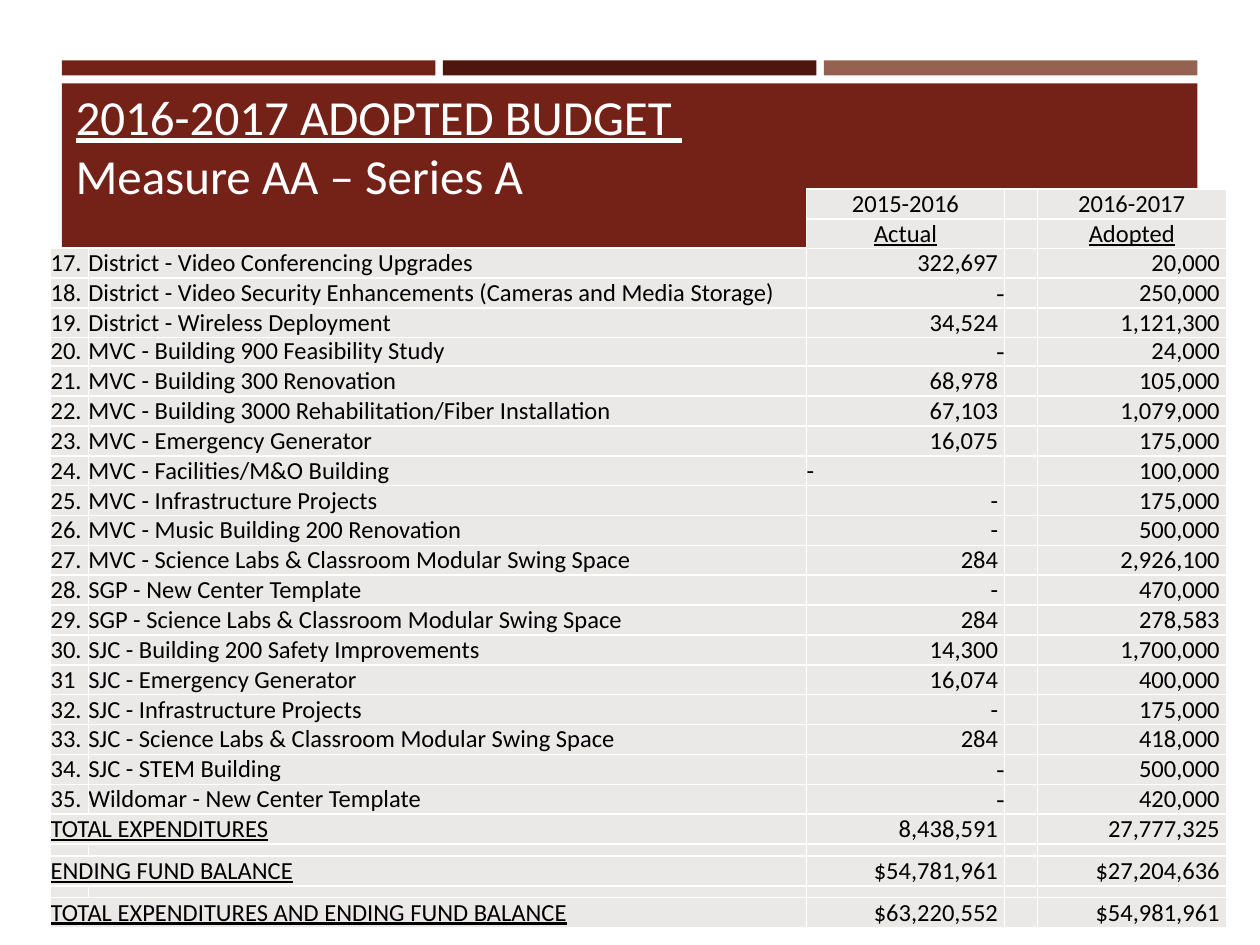
from lxml.etree import SubElement
from pptx import Presentation
from pptx.dml.color import RGBColor
from pptx.enum.shapes import MSO_SHAPE
from pptx.enum.text import MSO_ANCHOR, MSO_AUTO_SIZE, PP_ALIGN
from pptx.oxml.ns import qn
from pptx.util import Cm, Pt

COLORS = {
    "red": "742117",
    "dark": "4D160F",
    "tan": "956251",
    "cell": "EBE8E8",
    "white": "FFFFFF",
    "black": "000000",
}
NUMBER_WIDTH, NAME_WIDTH = 0.76, 14.48
AMOUNT_WIDTHS = [3.99, 0.66, 3.81]
TABLE_LEFT = 1.02
ROW_HEIGHT, SPACER_HEIGHT = 0.6, 0.24
AMOUNT_INSET = 0.13
FIRST_NUMBER = 17
UPPER_COUNT = 3
FLUSH_DASHES = {18, 20, 34, 35}
LEFT_DASHES = {24}

PROJECTS = [
    ("District - Video Conferencing Upgrades", "322,697", "20,000"),
    ("District - Video Security Enhancements (Cameras and Media Storage)", "-", "250,000"),
    ("District - Wireless Deployment", "34,524", "1,121,300"),
    ("MVC - Building 900 Feasibility Study", "-", "24,000"),
    ("MVC - Building 300 Renovation", "68,978", "105,000"),
    ("MVC - Building 3000 Rehabilitation/Fiber Installation", "67,103", "1,079,000"),
    ("MVC - Emergency Generator", "16,075", "175,000"),
    ("MVC - Facilities/M&O Building", "-", "100,000"),
    ("MVC - Infrastructure Projects", "-", "175,000"),
    ("MVC - Music Building 200 Renovation", "-", "500,000"),
    ("MVC - Science Labs & Classroom Modular Swing Space", "284", "2,926,100"),
    ("SGP - New Center Template", "-", "470,000"),
    ("SGP - Science Labs & Classroom Modular Swing Space", "284", "278,583"),
    ("SJC - Building 200 Safety Improvements", "14,300", "1,700,000"),
    ("SJC - Emergency Generator", "16,074", "400,000"),
    ("SJC - Infrastructure Projects", "-", "175,000"),
    ("SJC - Science Labs & Classroom Modular Swing Space", "284", "418,000"),
    ("SJC - STEM Building", "-", "500,000"),
    ("Wildomar - New Center Template", "-", "420,000"),
]
TOTALS = [
    ("TOTAL EXPENDITURES", "8,438,591", "27,777,325"),
    ("ENDING FUND BALANCE", "$54,781,961", "$27,204,636"),
    ("TOTAL EXPENDITURES AND ENDING FUND BALANCE", "$63,220,552", "$54,981,961"),
]


def color(name):
    return RGBColor.from_string(COLORS[name])


def add_text(para, text, size=14, font="Calibri", ink="black", underline=False, align=PP_ALIGN.LEFT):
    para.alignment = align
    span = para.add_run()
    span.text = text
    span.font.size = Pt(size)
    span.font.name = font
    span.font.color.rgb = color(ink)
    span.font.underline = underline


def add_bar(page, left, top, width, height, fill):
    bar = page.shapes.add_shape(MSO_SHAPE.RECTANGLE, Cm(left), Cm(top), Cm(width), Cm(height))
    bar.shadow.inherit = False
    bar.fill.solid()
    bar.fill.fore_color.rgb = color(fill)
    bar.line.fill.background()


def format_title(page):
    title = page.shapes.title
    title.left, title.top, title.width, title.height = Cm(1.27), Cm(1.24), Cm(22.2), Cm(3)
    frame = title.text_frame
    frame.auto_size = MSO_AUTO_SIZE.NONE
    frame.vertical_anchor = MSO_ANCHOR.BOTTOM
    para = frame.paragraphs[0]
    add_text(para, "2016-2017 ADOPTED BUDGET ", size=28, ink="white", underline=True)
    para.add_line_break()
    add_text(para, "Measure AA – Series A", size=28, ink="white")
    page.shapes._spTree.append(title._element)


def format_cell(cell, empty_size, anchor):
    cell.margin_left = cell.margin_right = cell.margin_top = cell.margin_bottom = 0
    cell.vertical_anchor = anchor
    properties = cell._tc.get_or_add_tcPr()
    for side in ("a:lnL", "a:lnR", "a:lnT", "a:lnB"):
        line = SubElement(properties, qn(side), w=str(Pt(1)))
        fill = SubElement(line, qn("a:solidFill"))
        SubElement(fill, qn("a:srgbClr"), val=COLORS["white"])
    cell.fill.solid()
    cell.fill.fore_color.rgb = color("cell")
    para = cell.text_frame.paragraphs[0]
    SubElement(para._p, qn("a:endParaRPr"), sz=str(empty_size * 100))


def add_grid(page, left, top, widths, heights, anchor=MSO_ANCHOR.MIDDLE):
    frame = page.shapes.add_table(
        len(heights), len(widths), Cm(left), Cm(top), Cm(sum(widths)), Cm(sum(heights))
    )
    table = frame.table
    table.first_row = table.horz_banding = False
    for column, width in zip(table.columns, widths):
        column.width = Cm(width)
    for row, height in zip(table.rows, heights):
        row.height = Cm(height)
        for cell in row.cells:
            format_cell(cell, 5 if height == SPACER_HEIGHT else 14, anchor)
    return table


def write_cell(cell, text, **text_format):
    add_text(cell.text_frame.paragraphs[0], text, **text_format)


def write_amount(cell, text, font="Calibri", align=PP_ALIGN.RIGHT, inset=AMOUNT_INSET):
    cell.margin_right = Cm(inset)
    write_cell(cell, text, font=font, align=align)


def write_projects(table, projects, first_number):
    for row, (name, actual, adopted) in enumerate(projects):
        number = first_number + row
        write_cell(table.cell(row, 0), "31" if number == 31 else f"{number}.")
        write_cell(table.cell(row, 1), name)
        if number in FLUSH_DASHES:
            write_amount(table.cell(row, 2), actual, font="Times New Roman", inset=0)
        elif number in LEFT_DASHES:
            write_amount(table.cell(row, 2), actual, align=PP_ALIGN.LEFT)
        else:
            write_amount(table.cell(row, 2), actual)
        write_amount(table.cell(row, 4), adopted)


def write_totals(table, first_row):
    for index, (name, actual, adopted) in enumerate(TOTALS):
        row = first_row + 2 * index
        table.cell(row, 0).merge(table.cell(row, 1))
        write_cell(table.cell(row, 0), name, underline=True)
        write_amount(table.cell(row, 2), actual)
        write_amount(table.cell(row, 4), adopted)


def write_header(table):
    for column, year, label in ((0, "2015-2016", "Actual"), (2, "2016-2017", "Adopted")):
        write_cell(table.cell(0, column), year, align=PP_ALIGN.CENTER)
        write_cell(table.cell(1, column), label, underline=True, align=PP_ALIGN.CENTER)


def main():
    deck = Presentation()
    deck.slide_width, deck.slide_height = Cm(25.4), Cm(19.05)
    page = deck.slides.add_slide(deck.slide_layouts[5])

    for index, fill in enumerate(("red", "dark", "tan")):
        add_bar(page, 1.25 + index * 7.68, 1.22, 7.53, 0.3, fill)
    add_bar(page, 1.25, 1.68, 22.89, 3.5, "red")
    format_title(page)

    widths = [NUMBER_WIDTH, NAME_WIDTH] + AMOUNT_WIDTHS
    upper, lower = PROJECTS[:UPPER_COUNT], PROJECTS[UPPER_COUNT:]
    heights = [ROW_HEIGHT] * len(lower) + [ROW_HEIGHT, SPACER_HEIGHT] * 2 + [ROW_HEIGHT]
    lower_table = add_grid(page, TABLE_LEFT, 6.78, widths, heights)
    write_projects(lower_table, lower, FIRST_NUMBER + UPPER_COUNT)
    write_totals(lower_table, len(lower))

    upper_table = add_grid(page, TABLE_LEFT, 5, widths, [ROW_HEIGHT] * UPPER_COUNT)
    write_projects(upper_table, upper, FIRST_NUMBER)

    header_left = TABLE_LEFT + NUMBER_WIDTH + NAME_WIDTH
    header = add_grid(page, header_left, 3.81, AMOUNT_WIDTHS, [ROW_HEIGHT] * 2, MSO_ANCHOR.BOTTOM)
    write_header(header)
    deck.save("out.pptx")


if __name__ == "__main__":
    main()
